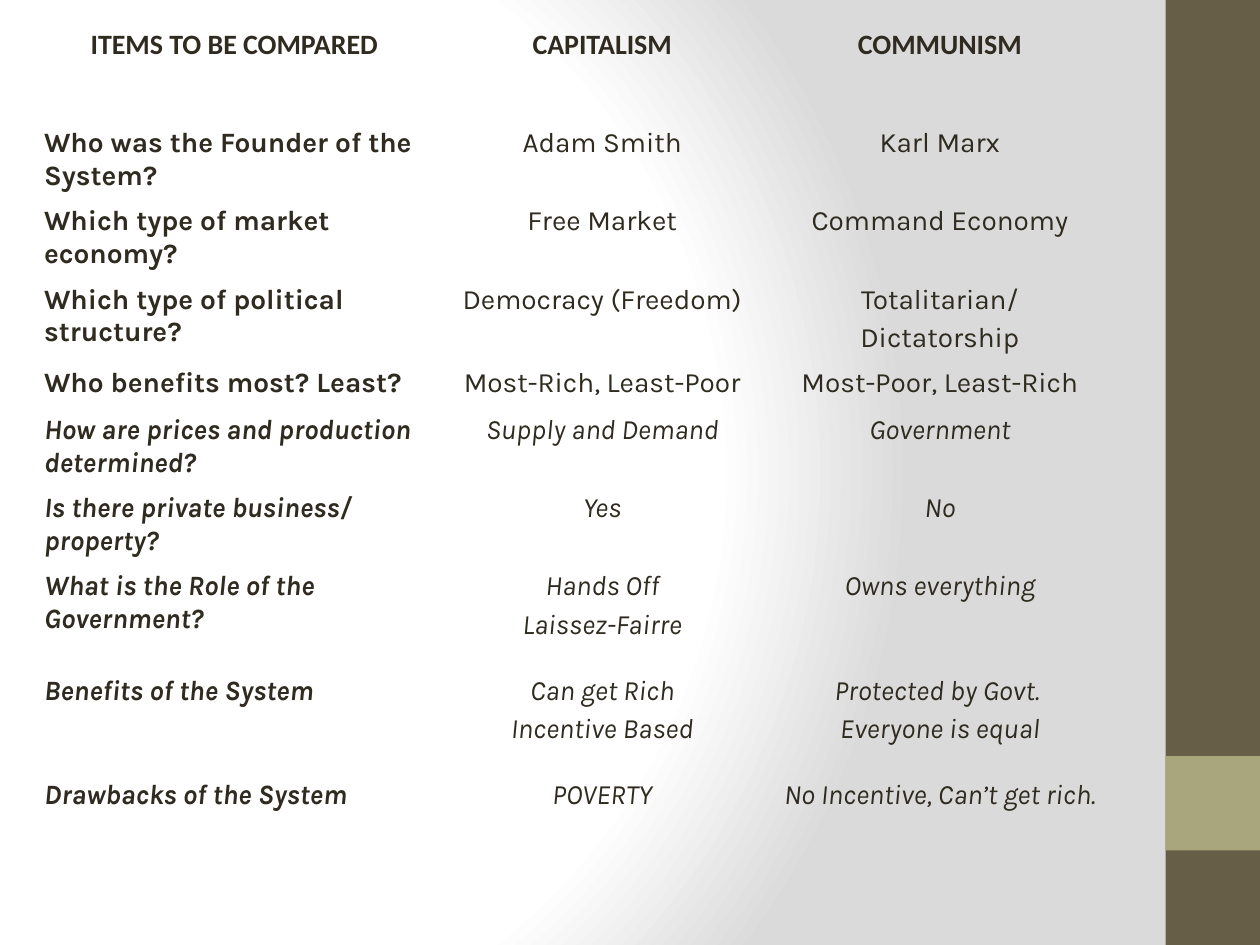
from pptx import Presentation
from pptx.dml.color import RGBColor
from pptx.enum.shapes import MSO_SHAPE
from pptx.enum.text import PP_ALIGN
from pptx.oxml import parse_xml
from pptx.oxml.ns import qn
from pptx.util import Inches, Pt
from lxml import etree

RECTANGLE = MSO_SHAPE.RECTANGLE
CENTER, LEFT = PP_ALIGN.CENTER, PP_ALIGN.LEFT

OLIVE = RGBColor(0x67, 0x5E, 0x47)
SAGE = RGBColor(0xA9, 0xA5, 0x7C)
INK = RGBColor(0x2F, 0x2B, 0x20)
WHITE = RGBColor(0xFF, 0xFF, 0xFF)
SILVER = RGBColor(0xDA, 0xDA, 0xDA)

GRID = 0.25  # inches per grid column and row: 40 columns by 30 rows
NO_STYLE = "{2D5ABB26-0587-4C30-8999-92F81FD0307C}"
NAMESPACES = (
    'xmlns:p="http://schemas.openxmlformats.org/presentationml/2006/main" '
    'xmlns:a="http://schemas.openxmlformats.org/drawingml/2006/main"'
)

COLUMN_WIDTHS = [3.22, 2.62, 2.74]
HEADER_HEIGHT, ONE_LINE, TWO_LINES, TWO_PARAS, TALL = 0.79, 0.37, 0.62, 0.66, 0.83
FIRST_ITALIC_ROW = 5
COMPARISON = [
    (HEADER_HEIGHT, "ITEMS TO BE COMPARED", "CAPITALISM", "COMMUNISM"),
    (TWO_LINES, "Who was the Founder of the System?", "Adam Smith", "Karl Marx"),
    (TWO_LINES, "Which type of market economy?", "Free Market", "Command Economy"),
    (TWO_PARAS, "Which type of political structure?", "Democracy (Freedom)",
     "Totalitarian/\nDictatorship"),
    (ONE_LINE, "Who benefits most? Least?", "Most-Rich, Least-Poor",
     "Most-Poor, Least-Rich"),
    (TWO_LINES, "How are prices and production determined?",
     "Supply and Demand", "Government"),
    (TWO_LINES, "Is there private business/ property?", "Yes", "No"),
    (TALL, "What is the Role of the Government?", "Hands Off\nLaissez-Fairre",
     "Owns everything"),
    (TALL, "Benefits of the System", "Can get Rich\nIncentive Based",
     "Protected by Govt. \nEveryone is equal"),
    (TALL, "Drawbacks of the System", "POVERTY", "No Incentive, Can’t get rich."),
    (TALL, "", "", ""),
]


def grid(count):
    return Inches(count * GRID)


class ComparisonSlide:
    text_size = Pt(16)
    header_font = "Calibri"
    body_font = "Karla"

    def __init__(self, deck):
        self.slide = deck.slides.add_slide(deck.slide_layouts[6])

    def radial_background(self, stops):
        stop_xml = "".join(
            f'<a:gs pos="{share * 1000}"><a:srgbClr val="{color}"/></a:gs>'
            for share, color in stops
        )
        background = parse_xml(
            f"<p:bg {NAMESPACES}><p:bgPr><a:gradFill rotWithShape=\"1\">"
            f"<a:gsLst>{stop_xml}</a:gsLst><a:path path=\"circle\">"
            '<a:fillToRect l="20000" t="50000" r="100000" b="50000"/></a:path>'
            "</a:gradFill><a:effectLst/></p:bgPr></p:bg>"
        )
        self.slide.element.find(qn("p:cSld")).insert(0, background)

    def block(self, column, row, columns, rows, color):
        box = self.slide.shapes.add_shape(
            RECTANGLE, grid(column), grid(row), grid(columns), grid(rows)
        )
        box.shadow.inherit = False
        box.fill.solid()
        box.fill.fore_color.rgb = color
        box.line.fill.background()

    def table(self, column, row, widths, records):
        frame = self.slide.shapes.add_table(
            len(records), len(widths), grid(column), grid(row),
            Inches(sum(widths)), Inches(sum(record[0] for record in records)),
        )
        table = frame.table
        table.first_row = table.horz_banding = False
        frame.element.find(".//" + qn("a:tableStyleId")).text = NO_STYLE
        for table_column, width in zip(table.columns, widths):
            table_column.width = Inches(width)
        for row_index, (height, *texts) in enumerate(records):
            table.rows[row_index].height = Inches(height)
            for column_index, text in enumerate(texts):
                self.cell(table, row_index, column_index, text)

    def cell(self, table, row_index, column_index, text):
        cell = table.cell(row_index, column_index)
        cell.fill.background()
        if not text:
            return
        is_header = row_index == 0
        is_question = column_index == 0 and not is_header
        font_format = {
            "size": self.text_size,
            "name": self.header_font if is_header else self.body_font,
            "bold": is_header or is_question,
            "italic": row_index >= FIRST_ITALIC_ROW,
        }
        cell.text = text
        for para in cell.text_frame.paragraphs:
            para.alignment = LEFT if is_question else CENTER
            self.space_before(para, 20)
            for span in para.runs:
                for name, value in font_format.items():
                    setattr(span.font, name, value)
                span.font.color.rgb = INK

    def space_before(self, para, percent):
        """Set the gap above a paragraph as a percentage of its line height."""
        properties = para._p.get_or_add_pPr()
        spacing = etree.SubElement(properties, qn("a:spcBef"))
        etree.SubElement(spacing, qn("a:spcPct"), val=str(percent * 1000))


def main():
    deck = Presentation()
    deck.slide_width, deck.slide_height = Inches(10), Inches(7.5)
    page = ComparisonSlide(deck)
    page.radial_background([(0, WHITE), (75, WHITE), (100, SILVER)])
    page.block(37, 0, 3, 30, OLIVE)
    page.block(37, 24, 3, 3, SAGE)
    page.table(1, 0.68, COLUMN_WIDTHS, COMPARISON)
    deck.save("out.pptx")


if __name__ == "__main__":
    main()
